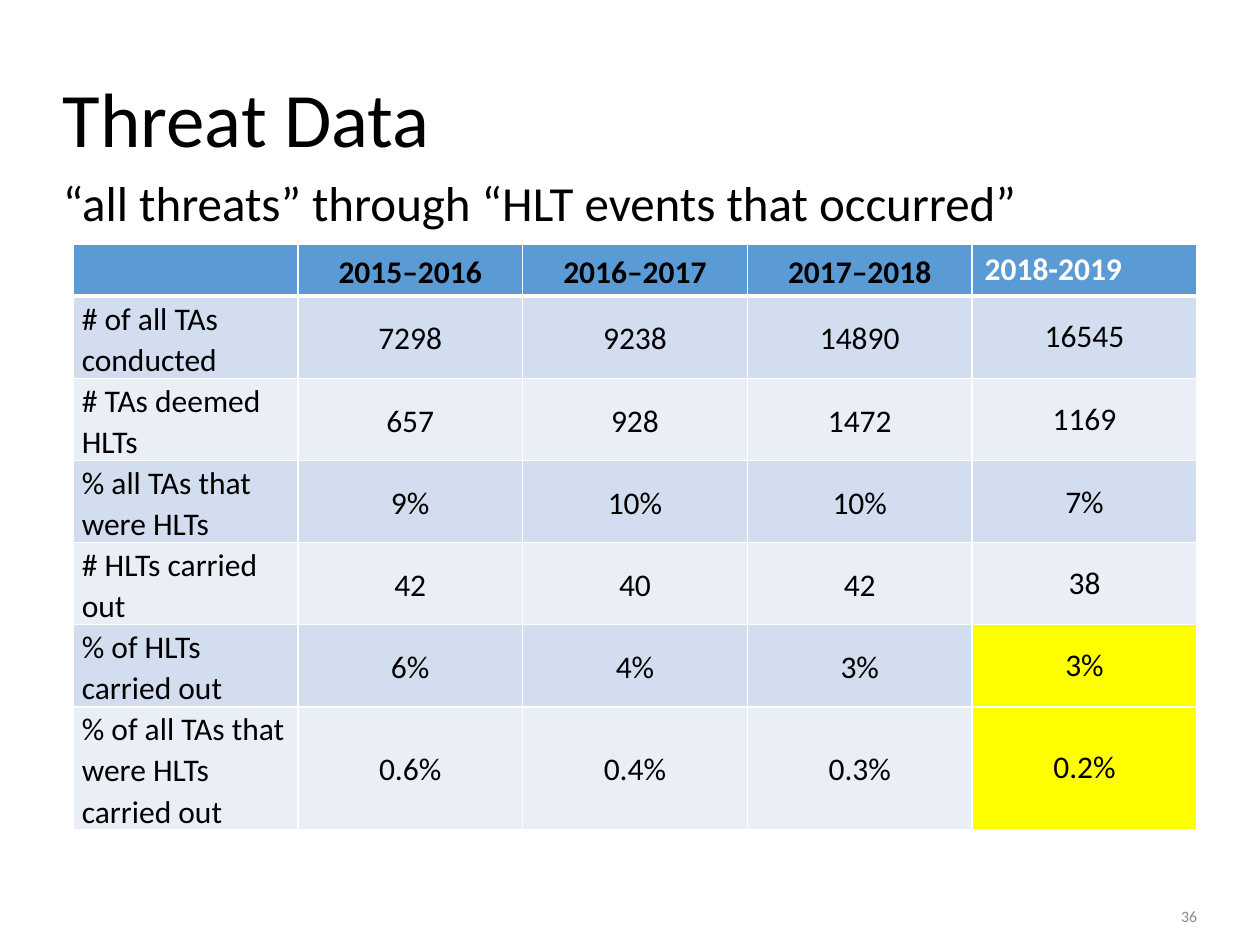
from lxml import etree
from pptx import Presentation
from pptx.dml.color import RGBColor
from pptx.enum.text import MSO_ANCHOR, PP_ALIGN
from pptx.oxml.ns import qn
from pptx.util import Inches, Pt

TOP, MIDDLE, BOTTOM = MSO_ANCHOR.TOP, MSO_ANCHOR.MIDDLE, MSO_ANCHOR.BOTTOM
LEFT, CENTER, RIGHT = PP_ALIGN.LEFT, PP_ALIGN.CENTER, PP_ALIGN.RIGHT

FONT = "Calibri"
BLACK, WHITE, GRAY = "000000", "FFFFFF", "8C8C8C"
HEADER_FILL, HIGHLIGHT = "5B9BD5", "FFFF00"
BAND_FILLS = ["EAEFF7", "D2DEEF"]

HEADINGS = [
    ("Threat Data", (0.5, 0.4, 9, 1.14), 44, BLACK, MIDDLE, LEFT, 0.9),
    ("“all threats” through “HLT events that occurred”",
     (0.5, 1.42, 9, 5.34), 28, BLACK, TOP, LEFT, 0.9),
    ("36", (7.25, 6.95, 2.25, 0.4), 9, GRAY, BOTTOM, RIGHT, 1.0),
]

THREATS = [
    ["", "2015–2016", "2016–2017", "2017–2018", "2018-2019"],
    ["# of all TAs conducted", "7298", "9238", "14890", "16545"],
    ["# TAs deemed HLTs", "657", "928", "1472", "1169"],
    ["% all TAs that were HLTs", "9%", "10%", "10%", "7%"],
    ["# HLTs carried out", "42", "40", "42", "38"],
    ["% of HLTs carried out", "6%", "4%", "3%", "3%"],
    ["% of all TAs that were HLTs carried out", "0.6%", "0.4%", "0.3%", "0.2%"],
]
HIGHLIGHTED = {(5, 4), (6, 4)}
ROW_HEIGHT = 0.41
TABLE_AREA = (0.58, 1.94, 8.92, ROW_HEIGHT * len(THREATS))


def rgb(value):
    return RGBColor.from_string(value)


def style(paragraph, size, color, align, spacing, bold=False):
    paragraph.alignment = align
    paragraph.line_spacing = spacing
    font = paragraph.font
    for run in paragraph.runs:
        font = run.font
    font.name, font.size, font.bold = FONT, Pt(size), bold
    font.color.rgb = rgb(color)


def add_heading(slide, text, area, size, color, anchor, align, spacing):
    frame = slide.shapes.add_textbox(*map(Inches, area)).text_frame
    frame.word_wrap = True
    frame.vertical_anchor = anchor
    frame.margin_left = frame.margin_right = 0
    frame.margin_top = frame.margin_bottom = 0
    frame.text = text
    style(frame.paragraphs[0], size, color, align, spacing)


def add_borders(cell, is_header):
    properties = cell._tc.get_or_add_tcPr()
    widths = {"lnL": 1, "lnR": 1, "lnT": 1, "lnB": 3 if is_header else 1}
    for index, (side, width) in enumerate(widths.items()):
        line = etree.Element(qn(f"a:{side}"), w=str(Pt(width)))
        fill = etree.SubElement(line, qn("a:solidFill"))
        etree.SubElement(fill, qn("a:srgbClr"), val=WHITE)
        properties.insert(index, line)


def fill_cell(cell, text, row, column):
    is_header, is_latest = row == 0, column == len(THREATS[0]) - 1
    cell.text = text
    cell.fill.solid()
    color = HEADER_FILL if is_header else BAND_FILLS[row % 2]
    cell.fill.fore_color.rgb = rgb(HIGHLIGHT if (row, column) in HIGHLIGHTED else color)
    cell.vertical_anchor = TOP if is_header and is_latest else MIDDLE
    if not is_latest:
        cell.margin_left = cell.margin_right = Inches(0.07)
        cell.margin_top, cell.margin_bottom = Inches(0.01), 0
    paragraph = cell.text_frame.paragraphs[0]
    align = LEFT if column == 0 or (is_header and is_latest) else CENTER
    style(paragraph, 18, WHITE if is_header and is_latest else BLACK, align,
          1.0 if is_latest and row != 3 else 1.07, is_header)
    if is_header and 0 < column and not is_latest:
        paragraph.space_after = Pt(8)
    add_borders(cell, is_header)


def main():
    deck = Presentation()
    deck.slide_width, deck.slide_height = Inches(10), Inches(7.5)
    slide = deck.slides.add_slide(deck.slide_layouts[6])
    for heading in HEADINGS:
        add_heading(slide, *heading)
    table = slide.shapes.add_table(
        len(THREATS), len(THREATS[0]), *map(Inches, TABLE_AREA)).table
    for row, texts in enumerate(THREATS):
        for column, text in enumerate(texts):
            fill_cell(table.cell(row, column), text, row, column)
    deck.save("out.pptx")


if __name__ == "__main__":
    main()
